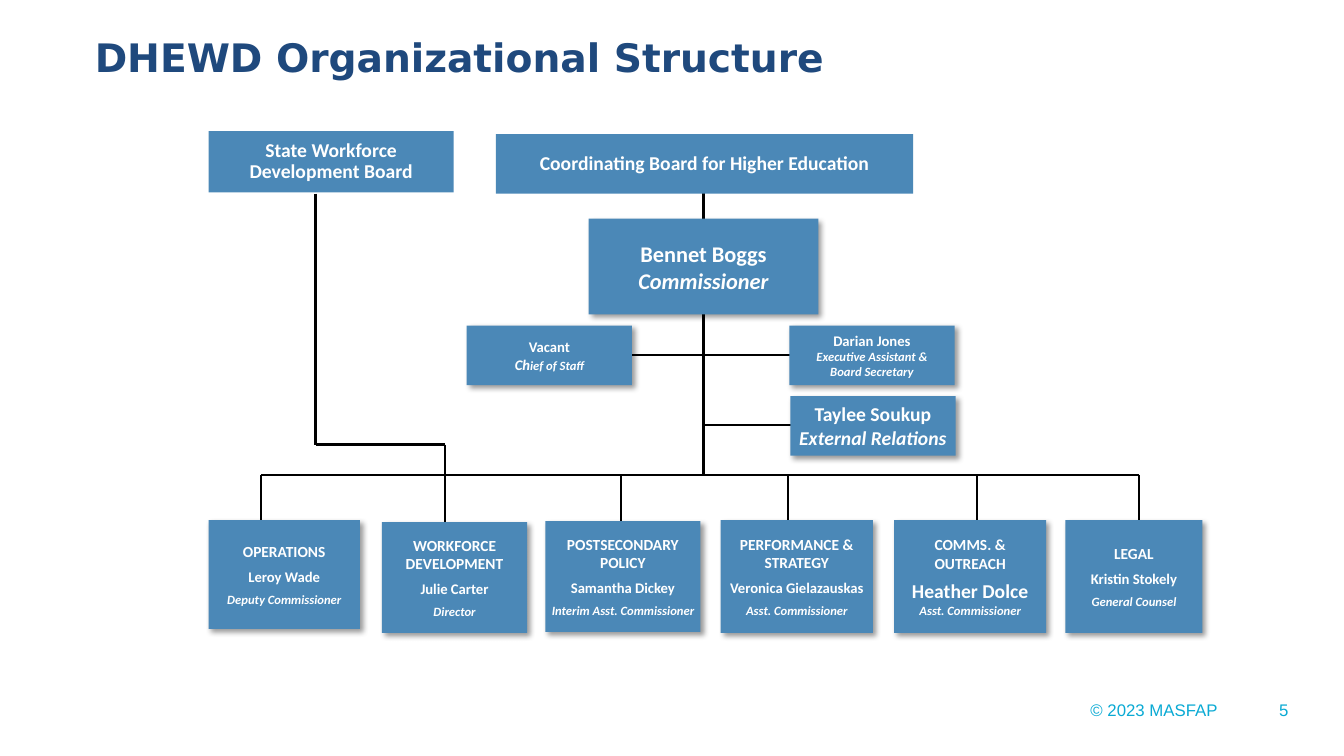
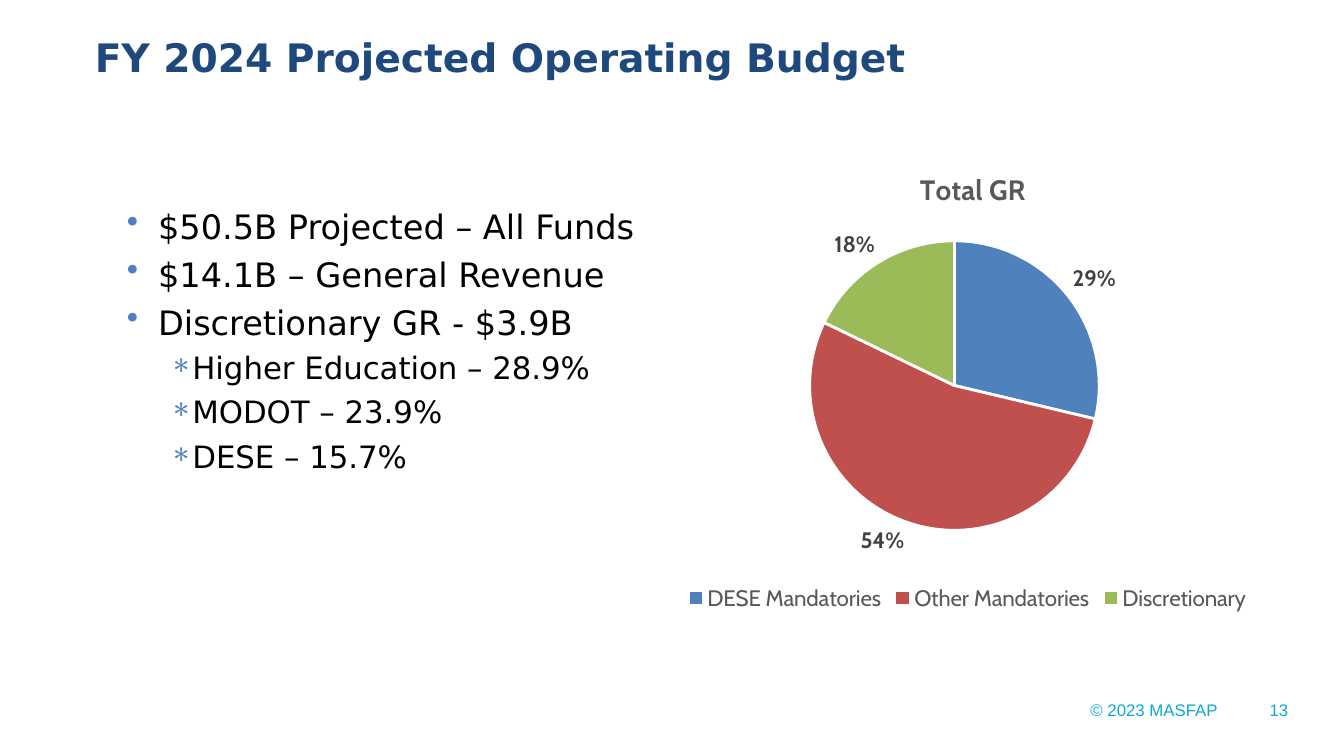
import itertools
from dataclasses import dataclass

import lxml.etree
import pptx
import pptx.chart.data
import pptx.dml.color
import pptx.enum.chart
import pptx.enum.shapes
import pptx.enum.text
import pptx.oxml.ns
import pptx.shapes.autoshape
import pptx.slide
import pptx.text.text
import pptx.util

WIDTH = pptx.util.Inches(13.333)
HEIGHT = pptx.util.Inches(7.5)
COLUMNS = 80
ROWS = 45

WHITE = "FFFFFF"
BLACK = "000000"
NAVY = "1F497D"
CYAN = "0AAAD4"
STEEL = "4B88B7"
BLUE = "4F81BD"
RED = "C0504D"
GREEN = "9BBB59"
GREY = "595959"
DARK_GREY = "404040"

CENTER = pptx.enum.text.PP_ALIGN.CENTER
RIGHT = pptx.enum.text.PP_ALIGN.RIGHT
MIDDLE = pptx.enum.text.MSO_ANCHOR.MIDDLE
TOP = pptx.enum.text.MSO_ANCHOR.TOP
qn = pptx.oxml.ns.qn


@dataclass(frozen=True)
class Area:
    column: float
    row: float
    columns: float
    rows: float

    def lengths(self) -> tuple[int, int, int, int]:
        return (across(self.column), down(self.row), across(self.columns), down(self.rows))


@dataclass(frozen=True)
class Span:
    text: str
    size: float
    italic: bool = False
    gap: float = 0
    joined: bool = False


@dataclass(frozen=True)
class Box:
    area: Area
    spans: tuple[Span, ...]
    raised: bool = True


@dataclass(frozen=True)
class Bullet:
    text: str
    size: float
    mark: str
    margin: float
    hanging: float


@dataclass(frozen=True)
class Slice:
    name: str
    value: float
    color: str


def across(columns: float) -> int:
    return round(WIDTH * columns / COLUMNS)


def down(rows: float) -> int:
    return round(HEIGHT * rows / ROWS)


def rgb(color: str) -> pptx.dml.color.RGBColor:
    return pptx.dml.color.RGBColor.from_string(color)


def format_font(font: pptx.text.text.Font, *, size: float, color: str, name: str,
                bold: bool = False, italic: bool = False) -> None:
    font.size = pptx.util.Pt(size)
    font.color.rgb = rgb(color)
    font.name = name
    font.bold = bold
    font.italic = italic


def write(paragraph, text: str, *, size: float, color: str, name: str,
          bold: bool = False, italic: bool = False, align=None) -> None:
    run = paragraph.add_run()
    run.text = text
    format_font(run.font, size=size, color=color, name=name, bold=bold, italic=italic)
    if align is not None:
        paragraph.alignment = align


def add_text_box(slide: pptx.slide.Slide, area: Area, anchor=TOP) -> pptx.text.text.TextFrame:
    frame = slide.shapes.add_textbox(*area.lengths()).text_frame
    frame.word_wrap = True
    frame.vertical_anchor = anchor
    return frame


def add_page(presentation, title: str, number: str) -> pptx.slide.Slide:
    slide = presentation.slides.add_slide(presentation.slide_layouts[5])
    placeholder = slide.shapes.title
    placeholder.left, placeholder.top, placeholder.width, placeholder.height = (
        Area(5.04, 1.68, 71.94, 4.32).lengths())
    frame = placeholder.text_frame
    frame.auto_size = pptx.enum.text.MSO_AUTO_SIZE.NONE
    frame.vertical_anchor = TOP
    write(frame.paragraphs[0], title, size=28, color=NAVY, name="DejaVu Sans", bold=True,
          align=pptx.enum.text.PP_ALIGN.LEFT)
    for text, area, align in (
        ("© 2023 MASFAP", Area(64.32, 41.04, 9.24, 2.4), None),
        (number, Area(74.52, 41.04, 2.76, 2.4), RIGHT),
    ):
        footer = add_text_box(slide, area, MIDDLE)
        write(footer.paragraphs[0], text, size=12, color=CYAN, name="Arial", align=align)
    return slide


def add_shadow(shape: pptx.shapes.autoshape.Shape) -> None:
    effects = shape.element.spPr.find(qn("a:effectLst"))
    shadow = lxml.etree.SubElement(
        effects, qn("a:outerShdw"), blurRad=str(pptx.util.Pt(4)), dist=str(pptx.util.Pt(3)),
        dir=str(45 * 60000), algn="tl", rotWithShape="0")
    color = lxml.etree.SubElement(shadow, qn("a:srgbClr"), val=BLACK)
    lxml.etree.SubElement(color, qn("a:alpha"), val="40000")


def add_box(slide: pptx.slide.Slide, box: Box) -> None:
    shape = slide.shapes.add_shape(
        pptx.enum.shapes.MSO_SHAPE.RECTANGLE, *box.area.lengths())
    shape.fill.solid()
    shape.fill.fore_color.rgb = rgb(STEEL)
    shape.line.fill.background()
    shape.shadow.inherit = False
    frame = shape.text_frame
    frame.word_wrap = True
    frame.vertical_anchor = MIDDLE
    if box.raised:
        add_shadow(shape)
        inset = pptx.util.Inches(0.04)
        frame.margin_left = frame.margin_right = inset
        frame.margin_top = frame.margin_bottom = inset
    paragraph = frame.paragraphs[0]
    for index, span in enumerate(box.spans):
        if index and not span.joined:
            paragraph = frame.add_paragraph()
        if span.gap:
            paragraph.space_before = pptx.util.Pt(span.gap)
        if not box.raised:
            paragraph.line_spacing = 0.9
        write(paragraph, span.text, size=span.size, color=WHITE, name="Calibri",
              bold=True, italic=span.italic, align=CENTER)


def add_route(slide: pptx.slide.Slide, *points: tuple[float, float]) -> None:
    for start, end in itertools.pairwise(points):
        connector = slide.shapes.add_connector(
            pptx.enum.shapes.MSO_CONNECTOR.STRAIGHT,
            across(start[0]), down(start[1]), across(end[0]), down(end[1]))
        connector.line.color.rgb = rgb(BLACK)
        connector.line.width = pptx.util.Pt(1.5)
        lxml.etree.SubElement(connector.element.spPr, qn("a:effectLst"))


def department(area: Area, unit: str, person: str, role: str,
               person_size: float = 10.5, role_gap: float = 4.9) -> Box:
    return Box(area, (Span(unit, 11), Span(person, person_size, gap=4.9),
                      Span(role, 9, italic=True, gap=role_gap)))


def build_organization(presentation) -> None:
    slide = add_page(presentation, "DHEWD Organizational Structure", "5")
    trunk, bus, drop_end = 41.88, 28.26, 31.2
    drops = (15.54, 36.96, 46.92, 58.14, 67.8)
    add_route(slide, (trunk, 11.5), (trunk, bus))
    add_route(slide, (drops[0], bus), (drops[-1], bus))
    for column in drops:
        add_route(slide, (column, bus), (column, drop_end))
    add_route(slide, (37.6, 21.12), (47, 21.12))
    add_route(slide, (trunk, 25.32), (47.1, 25.32))
    add_route(slide, (18.78, 11.52), (18.78, 26.46), (26.5, 26.46), (26.5, drop_end))

    boxes = (
        Box(Area(12.42, 7.8, 14.58, 3.66),
            (Span("State Workforce Development Board", 14),), raised=False),
        Box(Area(29.52, 7.98, 24.84, 3.54),
            (Span("Coordinating Board for Higher Education", 14),), raised=False),
        Box(Area(35.04, 13.02, 13.68, 5.7),
            (Span("Bennet Boggs", 16), Span("Commissioner", 16, italic=True))),
        Box(Area(27.78, 19.38, 9.84, 3.54),
            (Span("Vacant", 10.5), Span("Ch", 10.5, italic=True),
             Span("ief of Staff", 9, italic=True, joined=True))),
        Box(Area(46.98, 19.38, 9.84, 3.54),
            (Span("Darian Jones", 10.5), Span("Executive Assistant &", 9, italic=True),
             Span("Board Secretary", 9, italic=True))),
        Box(Area(47.04, 23.58, 9.84, 3.54),
            (Span("Taylee Soukup", 14), Span("External Relations", 14, italic=True))),
        department(Area(12.42, 30.96, 9, 6.48),
                   "OPERATIONS", "Leroy Wade", "Deputy Commissioner"),
        department(Area(22.74, 31.08, 8.64, 6.6),
                   "WORKFORCE DEVELOPMENT", "Julie Carter", "Director"),
        department(Area(32.46, 31.02, 9.24, 6.6),
                   "POSTSECONDARY POLICY", "Samantha Dickey", "Interim Asst. Commissioner"),
        department(Area(42.9, 30.96, 9.06, 6.72),
                   "PERFORMANCE & STRATEGY", "Veronica Gielazauskas", "Asst. Commissioner"),
        department(Area(53.22, 30.96, 9.06, 6.72), "COMMS. & OUTREACH", "Heather Dolce",
                   "Asst. Commissioner", person_size=14, role_gap=0),
        department(Area(63.42, 30.96, 8.16, 6.72),
                   "LEGAL", "Kristin Stokely", "General Counsel"),
    )
    for box in boxes:
        add_box(slide, box)


def add_bullet(paragraph, bullet: Bullet, first: bool) -> None:
    properties = paragraph._p.get_or_add_pPr()
    properties.set("marL", str(pptx.util.Inches(bullet.margin)))
    properties.set("indent", str(-pptx.util.Inches(bullet.hanging)))
    color = lxml.etree.SubElement(properties, qn("a:buClr"))
    lxml.etree.SubElement(color, qn("a:srgbClr"), val=BLUE)
    lxml.etree.SubElement(properties, qn("a:buChar"), char=bullet.mark)
    if not first:
        paragraph.space_before = pptx.util.Pt(round(bullet.size * 0.23, 1))
    write(paragraph, bullet.text, size=bullet.size, color=BLACK, name="DejaVu Sans")


def place_chart_part(parent, index: int, **shares: float) -> None:
    for old in parent.findall(qn("c:layout")):
        parent.remove(old)
    layout = lxml.etree.Element(qn("c:layout"))
    manual = lxml.etree.SubElement(layout, qn("c:manualLayout"))
    if "w" in shares:
        lxml.etree.SubElement(manual, qn("c:layoutTarget"), val="inner")
    for mode in ("xMode", "yMode"):
        lxml.etree.SubElement(manual, qn(f"c:{mode}"), val="edge")
    for key, share in shares.items():
        lxml.etree.SubElement(manual, qn(f"c:{key}"), val=str(share))
    parent.insert(index, layout)


def add_pie(slide: pptx.slide.Slide, area: Area, title: str, slices: tuple[Slice, ...]) -> None:
    data = pptx.chart.data.CategoryChartData(number_format="0%")
    data.categories = [part.name for part in slices]
    data.add_series("Series 1", [part.value for part in slices])
    chart = slide.shapes.add_chart(
        pptx.enum.chart.XL_CHART_TYPE.PIE, *area.lengths(), data).chart
    format_font(chart.font, size=10, color=BLACK, name="Cabin")
    chart.has_title = True
    write(chart.chart_title.text_frame.paragraphs[0], title,
          size=20, color=GREY, name="Cabin", bold=True)
    chart.has_legend = True
    chart.legend.position = pptx.enum.chart.XL_LEGEND_POSITION.BOTTOM
    chart.legend.include_in_layout = False
    format_font(chart.legend.font, size=16, color=GREY, name="Cabin")
    plot = chart.plots[0]
    plot.vary_by_categories = True
    for index, part in enumerate(slices):
        point = plot.series[0].points[index]
        point.format.fill.solid()
        point.format.fill.fore_color.rgb = rgb(part.color)
        point.format.line.color.rgb = rgb(WHITE)
        point.format.line.width = pptx.util.Pt(2)
    plot.has_data_labels = True
    labels = plot.data_labels
    labels.show_value = True
    labels.show_percentage = False
    labels.number_format = "0%"
    labels.number_format_is_linked = False
    labels.position = pptx.enum.chart.XL_LABEL_POSITION.OUTSIDE_END
    format_font(labels.font, size=16, color=DARK_GREY, name="Cabin", bold=True)
    place_chart_part(chart.element.find(".//" + qn("c:title")), 1, x=0.42, y=0.05)
    place_chart_part(chart.element.find(".//" + qn("c:plotArea")), 0,
                     x=0.26, y=0.21, w=0.44, h=0.61)


def build_budget(presentation) -> None:
    slide = add_page(presentation, "FY 2024 Projected Operating Budget", "13")
    frame = add_text_box(slide, Area(6.96, 11.94, 33.06, 21.06))
    funds = ("$50.5B Projected – All Funds", "$14.1B – General Revenue", "Discretionary GR - $3.9B")
    agencies = ("Higher Education – 28.9%", "MODOT – 23.9%", "DESE – 15.7%")
    bullets = [Bullet(text, 24, "•", 0.31, 0.31) for text in funds]
    bullets += [Bullet(text, 22, "∗", 0.63, 0.2) for text in agencies]
    for index, bullet in enumerate(bullets):
        paragraph = frame.add_paragraph() if index else frame.paragraphs[0]
        add_bullet(paragraph, bullet, first=index == 0)
    add_pie(slide, Area(37.98, 8.4, 39.24, 28.26), "Total GR", (
        Slice("DESE Mandatories", 0.29, BLUE),
        Slice("Other Mandatories", 0.54, RED),
        Slice("Discretionary", 0.18, GREEN),
    ))


def main() -> None:
    presentation = pptx.Presentation()
    presentation.slide_width = WIDTH
    presentation.slide_height = HEIGHT
    build_organization(presentation)
    build_budget(presentation)
    presentation.save("out.pptx")


if __name__ == "__main__":
    main()
